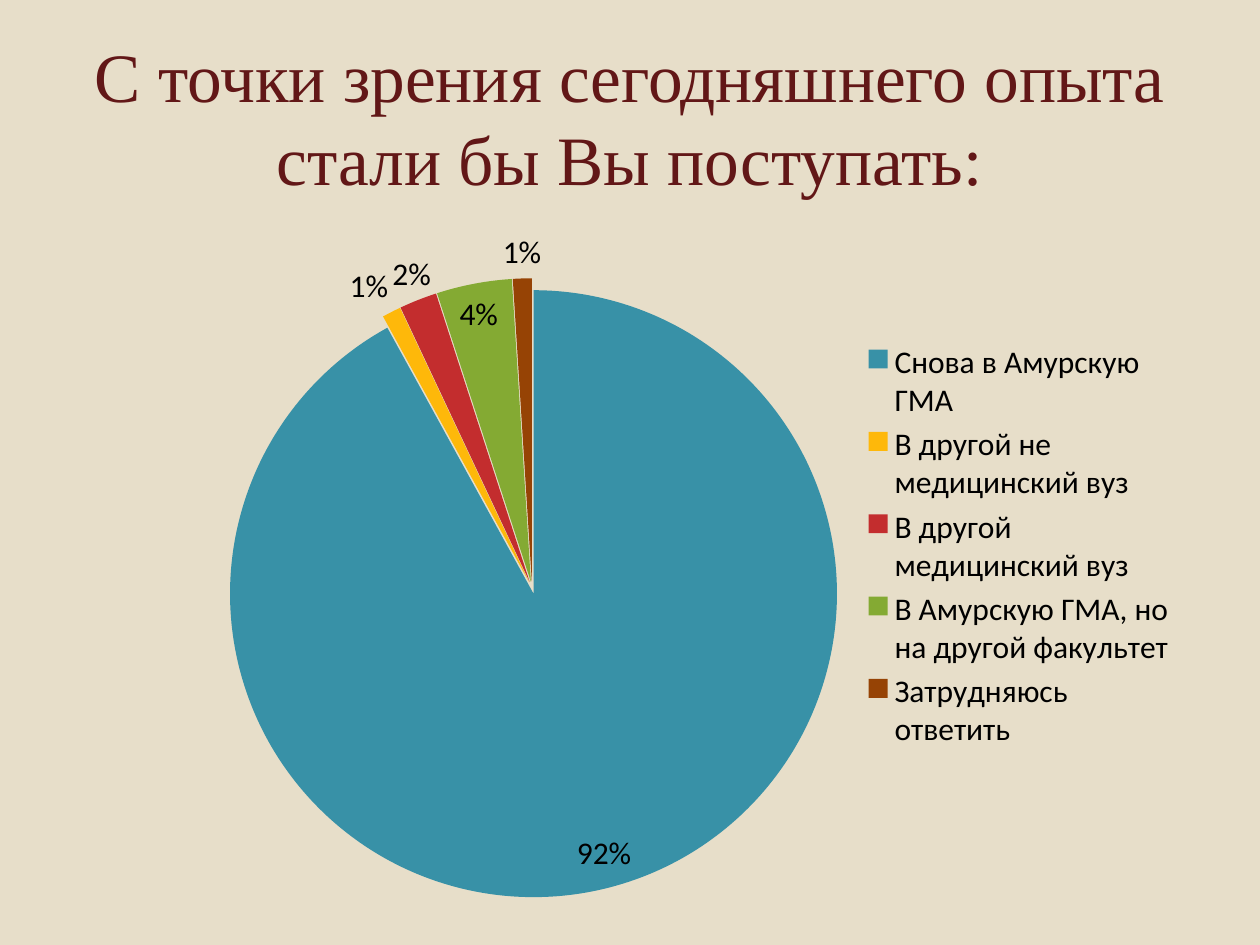
import pptx
import pptx.util
import pptx.chart.data
import pptx.enum.chart
import pptx.enum.text
from pptx.dml.color import RGBColor
from pptx.oxml import parse_xml
from pptx.oxml.ns import nsdecls, qn
from pptx.util import Inches, Pt

# Content
TITLE = "С точки зрения сегодняшнего опыта стали бы Вы поступать:"
DATA = [
    ("Снова в Амурскую ГМА", 92, "blue"),
    ("В другой не медицинский вуз", 1, "gold"),
    ("В другой медицинский вуз", 2, "red"),
    ("В Амурскую ГМА, но на другой факультет", 4, "green"),
    ("Затрудняюсь ответить", 1, "brown"),
]
HUES = {
    "back": "E7DEC9", "title": "621717", "text": "000000",
    "blue": "3891A7", "gold": "FEB80A", "red": "C32D2E",
    "green": "84AA33", "brown": "964305",
}
# Shares of the chart frame: left, top, width, height
PLOT = (0.02, 0.12, 0.63, 0.82)
KEY = (0.67, 0.2, 0.32, 0.55)


def hue(name):
    return RGBColor.from_string(HUES[name])


def layout(box, inner=""):
    """Manual layout element for a part of the chart."""
    modes = '<c:xMode val="edge"/><c:yMode val="edge"/>'
    sizes = "".join(f'<c:{k} val="{v}"/>' for k, v in zip("xywh", box))
    return parse_xml(f'<c:layout {nsdecls("c")}><c:manualLayout>'
                     f'{inner}{modes}{sizes}</c:manualLayout></c:layout>')


deck = pptx.Presentation()
deck.slide_width, deck.slide_height = Inches(10), Inches(7.5)
slide = deck.slides.add_slide(deck.slide_layouts[5])
slide.background.fill.solid()
slide.background.fill.fore_color.rgb = hue("back")

# Title
title = slide.shapes.title
title.left, title.top = Inches(0.5), Inches(0.3)
title.width, title.height = Inches(9), Inches(1.25)
frame = title.text_frame
frame.text = TITLE
frame.vertical_anchor = pptx.enum.text.MSO_ANCHOR.MIDDLE
para = frame.paragraphs[0]
para.alignment = pptx.enum.text.PP_ALIGN.CENTER
para.font.size, para.font.name = Pt(39.6), "Times New Roman"
para.font.color.rgb = hue("title")

# Pie chart
data = pptx.chart.data.CategoryChartData()
data.categories = [name for name, _, _ in DATA]
data.add_series("Series 1", [val for _, val, _ in DATA])
chart = slide.shapes.add_chart(
    pptx.enum.chart.XL_CHART_TYPE.PIE, Inches(1.61), Inches(1.47),
    Inches(7.8), Inches(6.03), data).chart
chart.has_title = False
chart.font.size, chart.font.name = Pt(18), "Calibri"
chart.font.color.rgb = hue("text")

# Slices, slightly pulled apart
plot = chart.plots[0]
plot.vary_by_categories = True
pie = plot.series[0]
for i, (_, _, shade) in enumerate(DATA):
    fill = pie.points[i].format.fill
    fill.solid()
    fill.fore_color.rgb = hue(shade)
pie._element.find(qn("c:dPt")).addprevious(
    parse_xml(f'<c:explosion {nsdecls("c")} val="2"/>'))

# Percent labels
tags = pie.data_labels
tags.show_percentage, tags.show_value = True, False
tags.number_format, tags.number_format_is_linked = "0%", False
tags.position = pptx.enum.chart.XL_LABEL_POSITION.BEST_FIT

# Legend and plot placement
chart.has_legend = True
key = chart.legend
key.position = pptx.enum.chart.XL_LEGEND_POSITION.RIGHT
key.include_in_layout = False
for old in key._element.findall(qn("c:layout")):
    key._element.remove(old)
key._element.find(qn("c:legendPos")).addnext(layout(KEY))
area = chart._chartSpace.chart.plotArea
for old in area.findall(qn("c:layout")):
    area.remove(old)
area.insert(0, layout(PLOT, '<c:layoutTarget val="inner"/>'))

deck.save("out.pptx")
